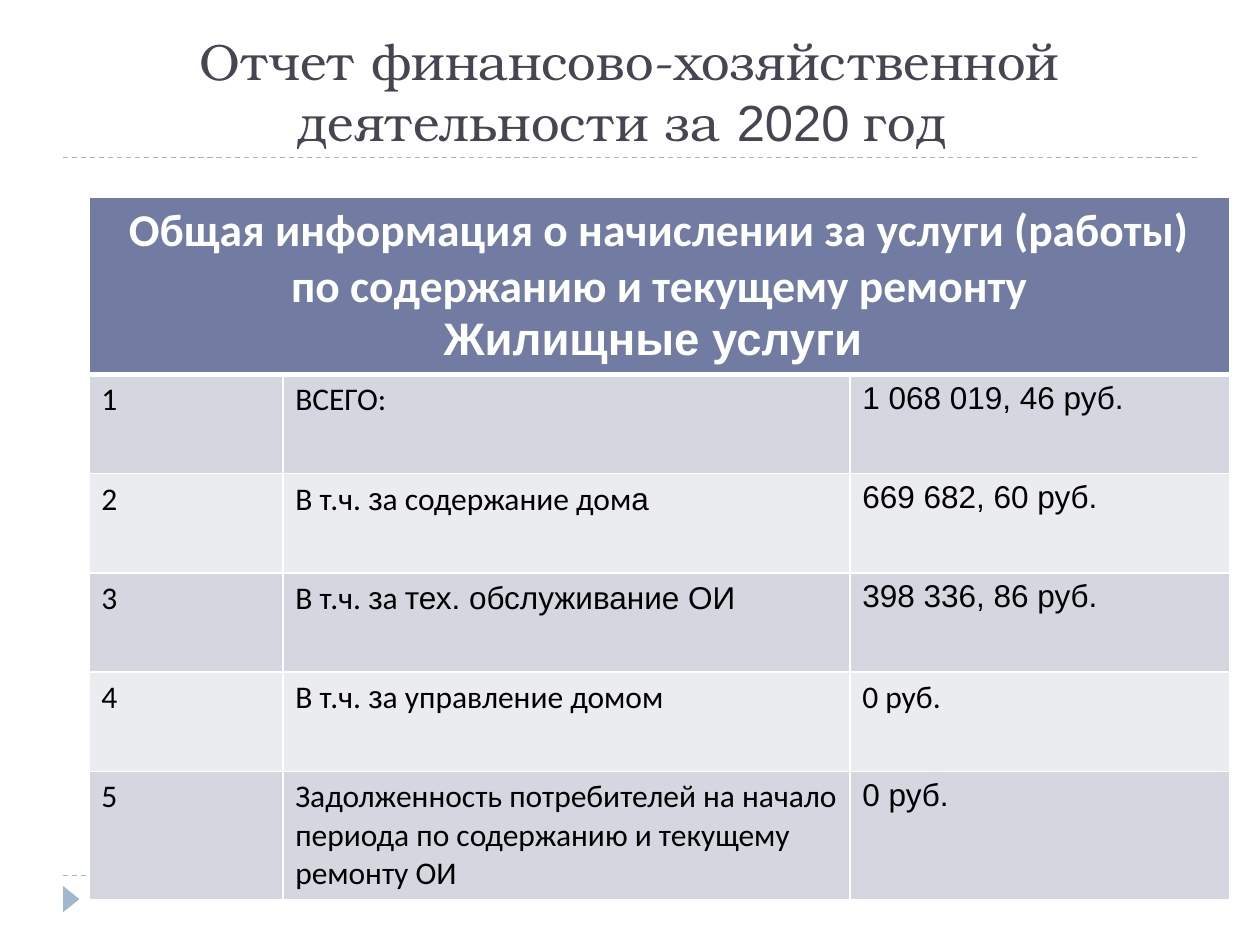
from typing import NamedTuple

from pptx import Presentation, oxml, util as u
from pptx.dml.color import RGBColor
from pptx.enum import dml, shapes, text
from pptx.oxml.ns import qn

SERIF, SANS, BODY = "TeX Gyre Bonum", "Arial", "Calibri"
WHITE, BLACK, TITLE, ACCENT = "FFFFFF", "000000", "464653", "9FB8CD"
HEADER_FILL, BAND_FILLS = "727CA3", ("D5D7E0", "EBECF0")


class Span(NamedTuple):
    words: str
    font: str = BODY


class Style(NamedTuple):
    size: int
    color: str
    bold: bool = False
    align: text.PP_ALIGN = text.PP_ALIGN.LEFT


class Row(NamedTuple):
    item: list[Span]
    amount: Span


TITLE_STYLE = Style(29, TITLE, align=text.PP_ALIGN.CENTER)
HEADER_STYLE = Style(26, WHITE, True, text.PP_ALIGN.CENTER)
CELL_STYLE = Style(18, BLACK)

HEADING = [
    Span("Отчет финансово-хозяйственной деятельности за ", SERIF),
    Span("2020 ", SANS),
    Span("год ", SERIF),
]
TABLE_HEADER = [
    [Span("Общая информация о начислении за услуги (работы) "
          "по содержанию и текущему ремонту")],
    [Span("Жилищные услуги ", SANS)],
]
INCLUDING = [Span("В т.ч. "), Span("з", SANS)]
ROWS = [
    Row([Span("ВСЕГО:")], Span("1 068 019, 46 руб.", SANS)),
    Row(INCLUDING + [Span("а содержание дом"), Span("а", SANS)],
        Span("669 682, 60 руб.", SANS)),
    Row(INCLUDING + [Span("а "), Span("тех. обслуживание ОИ", SANS)],
        Span("398 336, 86 руб.", SANS)),
    Row(INCLUDING + [Span("а управление домом")], Span("0 руб.")),
    Row([Span("Задолженность потребителей на начало периода "
              "по содержанию и текущему ремонту ОИ")],
        Span("0 руб.", SANS)),
]
COLUMN_WIDTHS = (3.91, 11.43, 7.67)
HEADER_HEIGHT, ROW_HEIGHT = 3.58, 2.0


def rgb(color: str) -> RGBColor:
    return RGBColor.from_string(color)


def write(frame, paragraphs: list[list[Span]], style: Style) -> None:
    for index, spans in enumerate(paragraphs):
        para = frame.add_paragraph() if index else frame.paragraphs[0]
        para.alignment = style.align
        for span in spans:
            run = para.add_run()
            run.text = span.words
            run.font.name = span.font
            run.font.size = u.Pt(style.size)
            run.font.bold = style.bold
            run.font.color.rgb = rgb(style.color)


def add_rule(page, top: float) -> None:
    rule = page.shapes.add_connector(
        shapes.MSO_CONNECTOR.STRAIGHT, u.Cm(1.27), u.Cm(top), u.Cm(24.13), u.Cm(top))
    rule.line.color.rgb = rgb(ACCENT)
    rule.line.width = u.Pt(0.75)
    rule.line.dash_style = dml.MSO_LINE.DASH
    properties = rule._element.spPr
    properties.append(properties.makeelement(qn("a:effectLst"), {}))


def add_border(cell, side: str, points: int) -> None:
    cell._tc.get_or_add_tcPr().append(oxml.parse_xml(
        f'<a:ln{side} xmlns:a="http://schemas.openxmlformats.org/drawingml/2006/main"'
        f' w="{u.Pt(points)}"><a:solidFill><a:srgbClr val="{WHITE}"/></a:solidFill>'
        f'</a:ln{side}>'))


def paint_cell(cell, row: int) -> None:
    # Only the edge between the header and the first row is thick
    edges = {"L": 1, "R": 1, "T": 3 if row == 1 else 1, "B": 3 if row == 0 else 1}
    for side, points in edges.items():
        add_border(cell, side, points)
    cell.fill.solid()
    cell.fill.fore_color.rgb = rgb(BAND_FILLS[(row - 1) % 2] if row else HEADER_FILL)


def add_charges_table(page) -> None:
    table = page.shapes.add_table(
        len(ROWS) + 1, len(COLUMN_WIDTHS), u.Cm(1.79), u.Cm(3.97),
        u.Cm(sum(COLUMN_WIDTHS)), u.Cm(HEADER_HEIGHT + ROW_HEIGHT * len(ROWS))).table
    for column, width in zip(table.columns, COLUMN_WIDTHS):
        column.width = u.Cm(width)
    for index, row in enumerate(table.rows):
        row.height = u.Cm(ROW_HEIGHT if index else HEADER_HEIGHT)
        for cell in row.cells:
            paint_cell(cell, index)

    header = table.cell(0, 0)
    header.merge(table.cell(0, len(COLUMN_WIDTHS) - 1))
    write(header.text_frame, TABLE_HEADER, HEADER_STYLE)
    for number, row in enumerate(ROWS, start=1):
        columns = ([Span(str(number))], row.item, [row.amount])
        for column, spans in enumerate(columns):
            write(table.cell(number, column).text_frame, [spans], CELL_STYLE)


def main() -> None:
    deck = Presentation()
    deck.slide_width, deck.slide_height = u.Cm(25.4), u.Cm(19.05)
    page = deck.slides.add_slide(deck.slide_layouts[5])

    # Title
    title = page.shapes.title
    title.left, title.top = u.Cm(1.27), u.Cm(0.64)
    title.width, title.height = u.Cm(22.86), u.Cm(2.54)
    title.text_frame.auto_size = text.MSO_AUTO_SIZE.NONE
    title.text_frame.vertical_anchor = text.MSO_ANCHOR.BOTTOM
    write(title.text_frame, [HEADING], TITLE_STYLE)

    # Dashed rules and corner marker
    for top in (17.65, 3.18):
        add_rule(page, top)
    marker = page.shapes.add_shape(
        shapes.MSO_SHAPE.ISOSCELES_TRIANGLE, u.Cm(1.17), u.Cm(17.96), u.Cm(0.53), u.Cm(0.33))
    marker.rotation = 90
    marker.shadow.inherit = False
    marker.fill.solid()
    marker.fill.fore_color.rgb = rgb(ACCENT)
    marker.line.fill.background()

    # Table of charges
    add_charges_table(page)
    deck.save("out.pptx")


if __name__ == "__main__":
    main()
